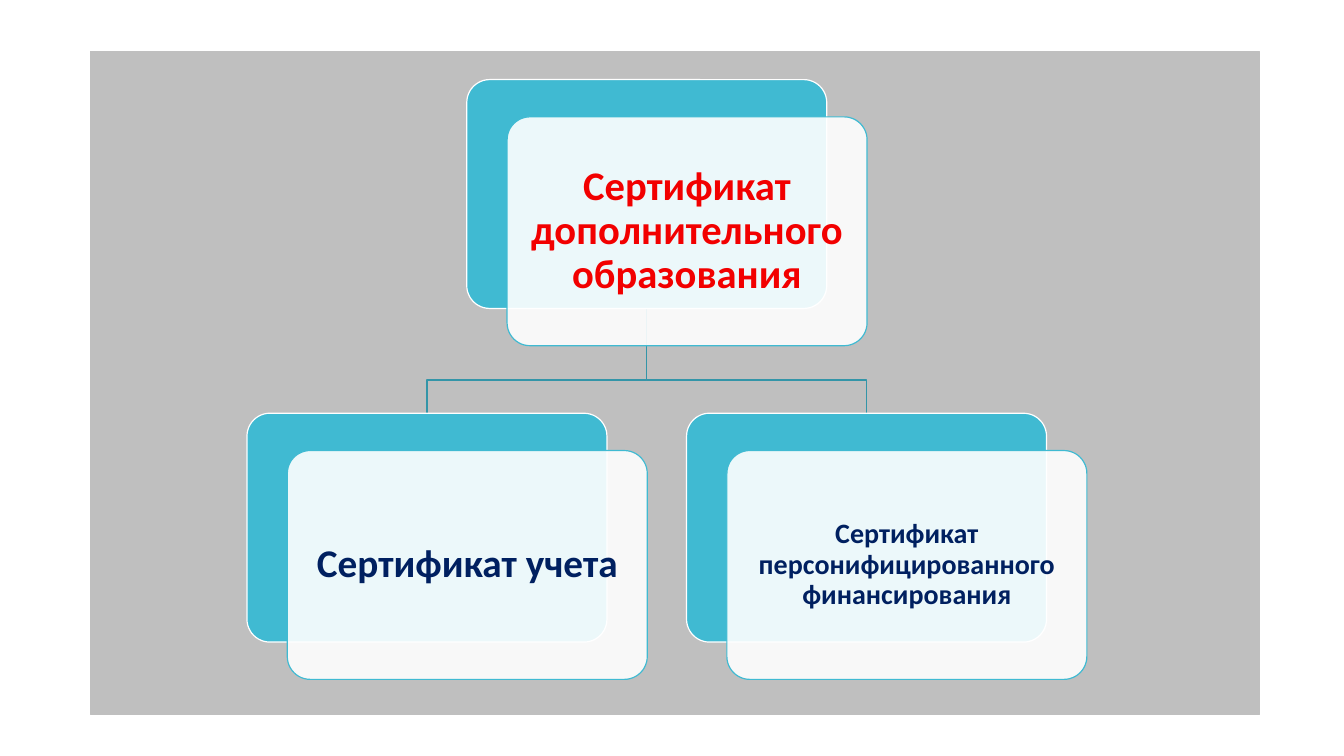
from dataclasses import dataclass

import pptx
import pptx.dml.color
import pptx.enum.shapes
import pptx.enum.text
import pptx.oxml
import pptx.oxml.ns
import pptx.shapes.autoshape
import pptx.slide
import pptx.util
from pptx.dml.color import RGBColor
from pptx.util import Inches

WHITE = RGBColor(0xFF, 0xFF, 0xFF)
GRAY = RGBColor(0xBF, 0xBF, 0xBF)
TURQUOISE = RGBColor(0x40, 0xBA, 0xD2)
BRANCH_COLOR = RGBColor(0x33, 0x95, 0xA8)
RED = RGBColor(0xF2, 0x00, 0x00)
NAVY = RGBColor(0x00, 0x20, 0x60)

FONT = "Calibri"
LINE_WIDTH = 0.85
NODE_WIDTH, NODE_HEIGHT = 3.57, 2.27
CARD_SHIFT_X, CARD_SHIFT_Y = 0.4, 0.37
CORNER = 0.1
CARD_OPACITY = 90
ROOT_LEFT, ROOT_TOP = 4.63, 0.79
CHILD_OFFSET, CHILD_TOP = 2.18, 4.1
BRANCH_BEND = 3.77


@dataclass(frozen=True)
class Node:
    text: str
    left: float
    top: float
    size: float
    color: RGBColor
    inset: float = 0.12

    @property
    def center(self) -> float:
        return self.left + NODE_WIDTH / 2


ROOT = Node("Сертификат дополнительного образования", ROOT_LEFT, ROOT_TOP, 29, RED)
CHILDREN = (
    Node("Сертификат учета", ROOT_LEFT - CHILD_OFFSET, CHILD_TOP, 28, NAVY),
    Node("Сертификат персонифицированного финансирования",
         ROOT_LEFT + CHILD_OFFSET, CHILD_TOP, 20, NAVY, inset=0.08),
)


def set_line(shape: pptx.shapes.autoshape.Shape, color: RGBColor) -> None:
    shape.line.color.rgb = color
    shape.line.width = pptx.util.Pt(LINE_WIDTH)


def add_panel(slide: pptx.slide.Slide, left: float, top: float, width: float,
              height: float, *, fill: RGBColor, line: RGBColor,
              rounded: bool = False) -> pptx.shapes.autoshape.Shape:
    kinds = pptx.enum.shapes.MSO_SHAPE
    shape = slide.shapes.add_shape(
        kinds.ROUNDED_RECTANGLE if rounded else kinds.RECTANGLE,
        Inches(left), Inches(top), Inches(width), Inches(height))
    if rounded:
        shape.adjustments[0] = CORNER
    shape.shadow.inherit = False
    shape.fill.solid()
    shape.fill.fore_color.rgb = fill
    set_line(shape, line)
    return shape


def set_fill_opacity(shape: pptx.shapes.autoshape.Shape, percent: int) -> None:
    qn = pptx.oxml.ns.qn
    color = shape.element.spPr.find(qn("a:solidFill")).find(qn("a:srgbClr"))
    color.append(pptx.oxml.parse_xml(
        f'<a:alpha {pptx.oxml.ns.nsdecls("a")} val="{percent * 1000}"/>'))


def write_text(shape: pptx.shapes.autoshape.Shape, text: str, *, size: float,
               color: RGBColor, inset: float) -> None:
    frame = shape.text_frame
    frame.word_wrap = True
    frame.vertical_anchor = pptx.enum.text.MSO_ANCHOR.MIDDLE
    frame.margin_left = frame.margin_right = Inches(inset)
    frame.margin_top = frame.margin_bottom = Inches(inset)
    para = frame.paragraphs[0]
    para.alignment = pptx.enum.text.PP_ALIGN.CENTER
    para.line_spacing = 0.9
    span = para.add_run()
    span.text = text
    span.font.name = FONT
    span.font.size = pptx.util.Pt(size)
    span.font.bold = True
    span.font.color.rgb = color


def add_node(slide: pptx.slide.Slide, node: Node) -> None:
    """Draw a coloured backing with a translucent text card shifted over it."""
    add_panel(slide, node.left, node.top, NODE_WIDTH, NODE_HEIGHT,
              fill=TURQUOISE, line=WHITE, rounded=True)
    card = add_panel(slide, node.left + CARD_SHIFT_X, node.top + CARD_SHIFT_Y,
                     NODE_WIDTH, NODE_HEIGHT,
                     fill=WHITE, line=TURQUOISE, rounded=True)
    set_fill_opacity(card, CARD_OPACITY)
    write_text(card, node.text, size=node.size, color=node.color, inset=node.inset)


def add_branch(slide: pptx.slide.Slide, parent: Node, child: Node) -> None:
    start_x, end_x = Inches(parent.center), Inches(child.center)
    bend = Inches(BRANCH_BEND)
    builder = slide.shapes.build_freeform(start_x, Inches(parent.top + NODE_HEIGHT))
    builder.add_line_segments(
        [(start_x, bend), (end_x, bend), (end_x, Inches(child.top))], close=False)
    branch = builder.convert_to_shape()
    branch.shadow.inherit = False
    branch.fill.background()
    set_line(branch, BRANCH_COLOR)


def main() -> None:
    deck = pptx.Presentation()
    deck.slide_width, deck.slide_height = Inches(13.33), Inches(7.5)
    slide = deck.slides.add_slide(deck.slide_layouts.get_by_name("Blank"))
    add_panel(slide, 0.9, 0.51, 11.59, 6.58, fill=GRAY, line=GRAY)
    for child in reversed(CHILDREN):
        add_branch(slide, ROOT, child)
    for node in (ROOT, *CHILDREN):
        add_node(slide, node)
    deck.save("out.pptx")


if __name__ == "__main__":
    main()
